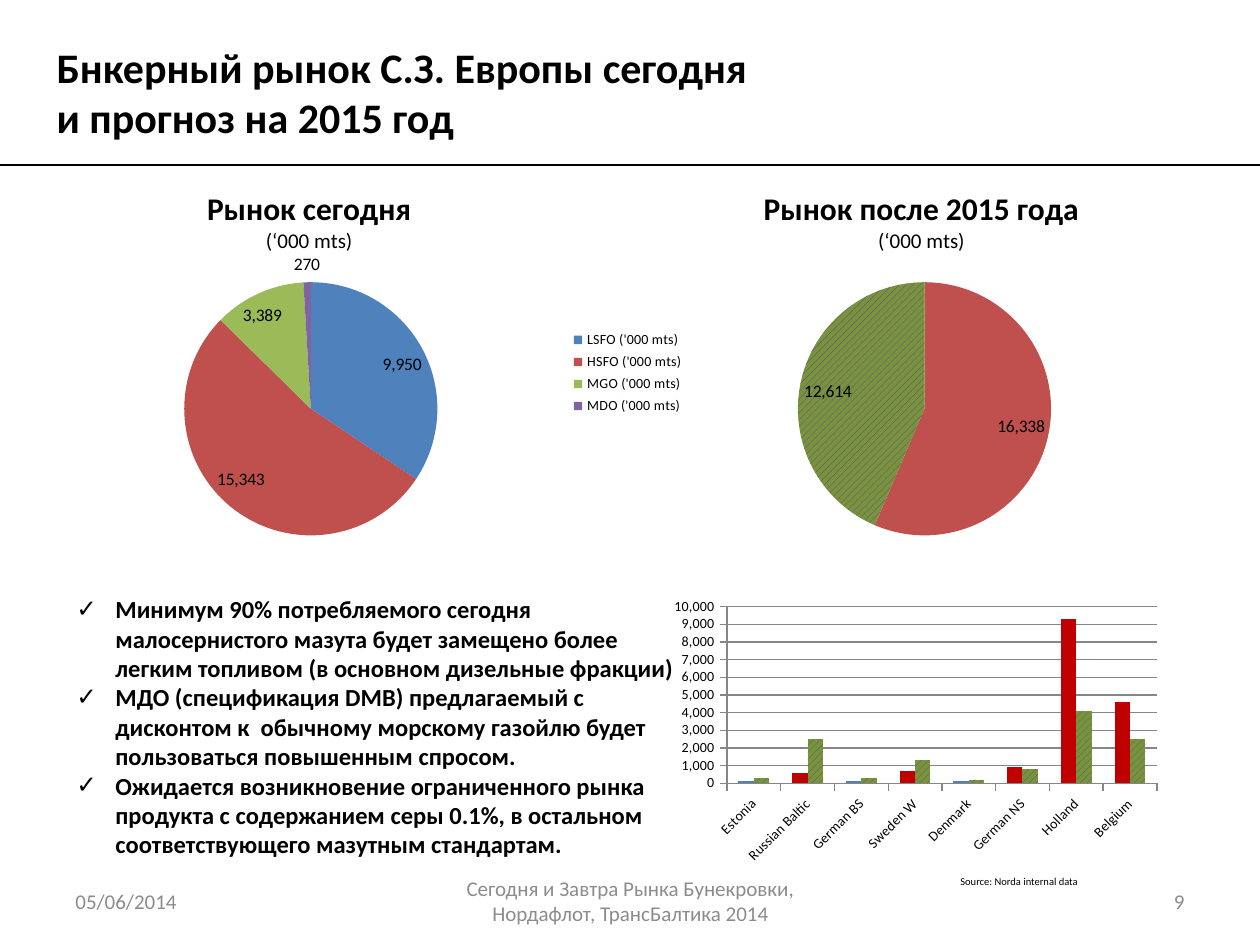
from lxml.etree import SubElement as Sub
from pptx import Presentation
from pptx.chart.data import CategoryChartData as Data
from pptx.dml.color import RGBColor as RGB
from pptx.enum.chart import XL_CHART_TYPE as Kind, XL_LABEL_POSITION as Spot
from pptx.enum.chart import XL_LEGEND_POSITION as Side, XL_TICK_MARK as Tick
from pptx.enum.dml import MSO_PATTERN as Hatch
from pptx.enum.shapes import MSO_CONNECTOR as Link
from pptx.enum.text import MSO_ANCHOR as Anchor, MSO_AUTO_SIZE as Fit, PP_ALIGN as Align
from pptx.oxml import parse_xml
from pptx.oxml.ns import nsdecls, qn
from pptx.util import Emu, Pt

SCALE = 914400 / 126
FONT = "Calibri"
BLACK = RGB(0, 0, 0)
GRAY = RGB(0x8C, 0x8C, 0x8C)
GRID = RGB(0x86, 0x86, 0x86)
BLUE = RGB(0x4F, 0x81, 0xBD)
BRICK = RGB(0xC0, 0x50, 0x4D)
LIME = RGB(0x9B, 0xBB, 0x59)
PURPLE = RGB(0x80, 0x64, 0xA2)
RED = RGB(0xC0, 0, 0)
OLIVE = RGB(0x77, 0x93, 0x3C)
VIOLET = RGB(0x70, 0x30, 0xA0)
PLUM = RGB(0x60, 0x4A, 0x7B)

FUELS = [f"{fuel} ('000 mts)" for fuel in ("LSFO", "HSFO", "MGO", "MDO")]
PLACES = ["Estonia", "Russian Baltic", "German BS", "Sweden W",
          "Denmark", "German NS", "Holland", "Belgium"]
HEAVY = [100, 600, 100, 700, 100, 900, 9300, 4600]
LIGHT = [300, 2500, 300, 1300, 200, 800, 4100, 2500]
POINTS = [
    "Минимум 90% потребляемого сегодня малосернистого мазута будет замещено "
    "более легким топливом (в основном дизельные фракции)",
    "МДО (спецификация DMB) предлагаемый с дисконтом к  обычному морскому "
    "газойлю будет пользоваться повышенным спросом.",
    "Ожидается возникновение ограниченного рынка продукта с содержанием серы "
    "0.1%, в остальном соответствующего мазутным стандартам.",
]


def px(num):
    return Emu(round(num * SCALE))


def style(font, size, color=BLACK, bold=False):
    font.name, font.size, font.bold = FONT, Pt(size), bold
    font.color.rgb = color


def write(para, text, size=12, color=BLACK, bold=False, align=None, mark=None):
    if mark:
        props = para._p.get_or_add_pPr()
        props.set("marL", str(px(39)))
        props.set("indent", str(-px(39)))
        Sub(props, qn("a:buFont"), typeface=FONT)
        Sub(props, qn("a:buChar"), char=mark)
    if align is not None:
        para.alignment = align
    run = para.add_run()
    run.text = text
    style(run.font, size, color, bold)


def add_text(slide, box, lines, anchor=Anchor.TOP, **form):
    frame = slide.shapes.add_textbox(*map(px, box)).text_frame
    frame.word_wrap = True
    frame.vertical_anchor = anchor
    for num, line in enumerate(lines):
        para = frame.add_paragraph() if num else frame.paragraphs[0]
        write(para, line, **form)


def add_title(slide, box, text):
    title = slide.shapes.title
    title.left, title.top, title.width, title.height = map(px, box)
    frame = title.text_frame
    frame.auto_size = Fit.NONE
    frame.vertical_anchor = Anchor.MIDDLE
    write(frame.paragraphs[0], text, size=24, bold=True, align=Align.LEFT)


def draw(line, color):
    line.color.rgb = color
    line.width = Pt(0.75)


def add_rule(slide, y):
    rule = slide.shapes.add_connector(Link.STRAIGHT, 0, px(y), px(1260), px(y))
    draw(rule.line, BLACK)
    Sub(rule._element.spPr, qn("a:effectLst"))


def place(parent, index, **parts):
    for old in parent.findall(qn("c:layout")):
        parent.remove(old)
    layout = parse_xml(f"<c:layout {nsdecls('c')}/>")
    manual = Sub(layout, qn("c:manualLayout"))
    if "w" in parts:
        Sub(manual, qn("c:layoutTarget"), val="inner")
    for axis in "xy":
        Sub(manual, qn(f"c:{axis}Mode"), val="edge")
    for name, part in parts.items():
        Sub(manual, qn(f"c:{name}"), val=str(part))
    parent.insert(index, layout)


def hatch(fill, fore, back):
    fill.patterned()
    fill.pattern = Hatch.WIDE_UPWARD_DIAGONAL
    fill.fore_color.rgb, fill.back_color.rgb = fore, back


def paint(fill, color):
    fill.solid()
    fill.fore_color.rgb = color


def add_chart(slide, kind, box, cats, rows, plot):
    data = Data(number_format="#,##0")
    data.categories = cats
    for num, row in enumerate(rows, 1):
        data.add_series(f"Series {num}", row)
    chart = slide.shapes.add_chart(kind, *map(px, box), data).chart
    style(chart.font, 10)
    chart.has_legend = chart.has_title = False
    place(chart._chartSpace.chart.plotArea, 0, **plot)
    return chart


def add_pie(slide, box, head, cats, row, plot, left):
    chart = add_chart(slide, Kind.PIE, box, cats, [row], plot)
    chart.has_title = True
    title = chart.chart_title
    frame = title.text_frame
    write(frame.paragraphs[0], head, size=18, bold=True)
    write(frame.add_paragraph(), "(‘000 mts)", size=12)
    place(title._element, 1, x=left, y=0)
    pie = chart.plots[0]
    for num, color in enumerate((BLUE, BRICK, LIME, PURPLE)):
        paint(pie.series[0].points[num].format.fill, color)
    pie.has_data_labels = True
    tags = pie.data_labels
    tags.show_value, tags.show_percentage = True, False
    tags.number_format, tags.number_format_is_linked = "#,##0", False
    tags.position = Spot.BEST_FIT
    style(tags.font, 10)
    return chart


def add_bars(slide, box):
    chart = add_chart(slide, Kind.COLUMN_CLUSTERED, box, PLACES, [HEAVY, LIGHT],
                      dict(x=0.12, y=0.05, w=0.86, h=0.64))
    bars = chart.plots[0]
    bars.gap_width, bars.overlap, bars.vary_by_categories = 150, 0, False
    first, second = bars.series
    paint(first.format.fill, BLUE)
    for num, amount in enumerate(HEAVY):
        if amount > 100:
            paint(first.points[num].format.fill, RED)
    hatch(second.format.fill, PLUM, OLIVE)
    cat, val = chart.category_axis, chart.value_axis
    for axis in (cat, val):
        axis.major_tick_mark = Tick.OUTSIDE
        draw(axis.format.line, GRID)
        style(axis.tick_labels.font, 8)
    cat._element.find(qn("c:txPr")).find(qn("a:bodyPr")).set("rot", "-2700000")
    val.minimum_scale, val.maximum_scale, val.major_unit = 0, 10000, 1000
    val.tick_labels.number_format = "#,##0"
    val.tick_labels.number_format_is_linked = False
    draw(val.major_gridlines.format.line, GRID)


def main():
    deck = Presentation()
    deck.slide_width, deck.slide_height = px(1260), px(945)
    slide = deck.slides.add_slide(deck.slide_layouts[5])
    add_rule(slide, 165)
    add_title(slide, (44, 38, 735, 107),
              "Бнкерный рынок С.З. Европы сегодня и прогноз на 2015 год")

    today = add_pie(slide, (64, 184, 633, 378), "Рынок сегодня", FUELS,
                    [9950, 15343, 3389, 270],
                    dict(x=0.19, y=0.26, w=0.4, h=0.67), 0.22)
    today.has_legend = True
    today.legend.position = Side.RIGHT
    today.legend.include_in_layout = False
    style(today.legend.font, 8)
    later = add_pie(slide, (627, 184, 633, 378), "Рынок после 2015 года",
                    ["1", "2", "3", "4"], [None, 16338, 12614, None],
                    dict(x=0.27, y=0.26, w=0.4, h=0.67), 0.21)
    hatch(later.plots[0].series[0].points[2].format.fill, VIOLET, OLIVE)

    add_text(slide, (64, 588, 625, 280), POINTS, size=14, bold=True, mark="✓")
    add_bars(slide, (667, 593, 500, 276))
    add_text(slide, (948, 869, 208, 25), ["Source: Norda internal data"], size=6)
    foot = dict(anchor=Anchor.MIDDLE, color=GRAY)
    add_text(slide, (63, 876, 294, 50), ["05/06/2014"], **foot)
    add_text(slide, (431, 876, 399, 50),
             ["Сегодня и Завтра Рынка Бунекровки, Нордафлот, ТрансБалтика 2014"],
             align=Align.CENTER, **foot)
    add_text(slide, (903, 876, 294, 50), ["9"], align=Align.RIGHT, **foot)
    deck.save("out.pptx")


if __name__ == "__main__":
    main()
